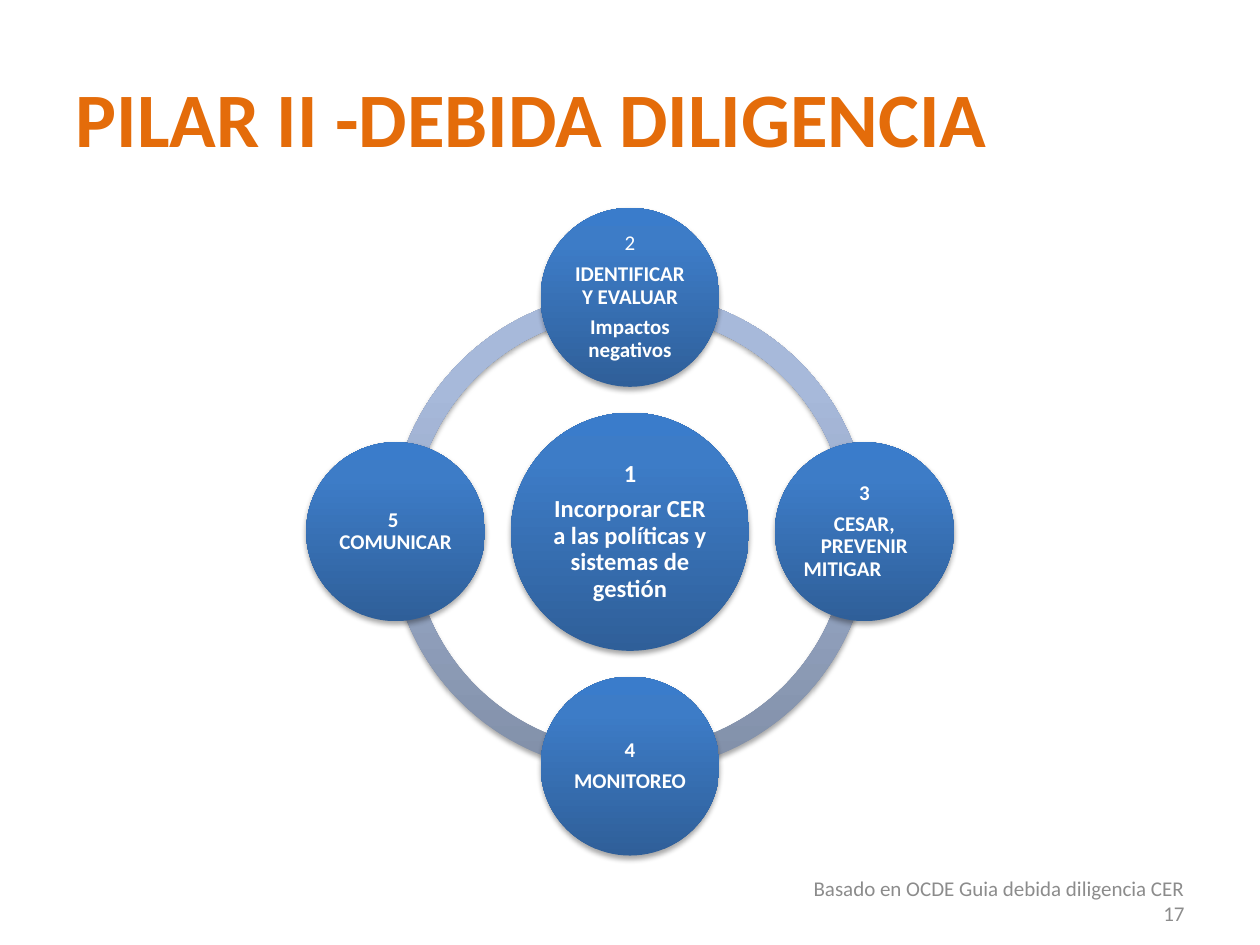
from lxml.etree import SubElement
from pptx import Presentation
from pptx.dml.color import RGBColor
from pptx.enum.shapes import MSO_SHAPE
from pptx.enum.text import MSO_ANCHOR, PP_ALIGN
from pptx.oxml.ns import qn
from pptx.util import Inches, Pt

WHITE, ORANGE, GRAY = "FFFFFF", "E46C0A", "8C8C8C"
CIRCLE_STOPS = [(0, "2F5F99"), (80, "3D7CC7"), (100, "3A7CCB")]
RING_STOPS = [(0, "818FA8"), (80, "A7B9DA"), (100, "A7BADC")]
CENTER_X, CENTER_Y = 5, 4.22
ORBIT = 1.86


def color(hex_string):
    return RGBColor.from_string(hex_string)


def add_element(parent, tag, **attributes):
    return SubElement(parent, qn(tag), {k: str(v) for k, v in attributes.items()})


class SlideBuilder:
    def __init__(self, presentation, font="Calibri"):
        self.font = font
        self.slide = presentation.slides.add_slide(presentation.slide_layouts[5])
        self.diagram = self.slide.shapes.add_group_shape()

    def add_run(self, paragraph, text, size, hex_color, bold=False):
        run = paragraph.add_run()
        run.text = text
        run.font.name = self.font
        run.font.size = Pt(size)
        run.font.bold = bold
        run.font.color.rgb = color(hex_color)

    def title(self, text):
        shape = self.slide.shapes.title
        shape.left, shape.top = Inches(0.5), Inches(0.3)
        shape.width, shape.height = Inches(9), Inches(1.25)
        shape.text_frame.vertical_anchor = MSO_ANCHOR.MIDDLE
        paragraph = shape.text_frame.paragraphs[0]
        paragraph.alignment = PP_ALIGN.LEFT
        self.add_run(paragraph, text, 44, ORANGE, True)

    def shaded_shape(self, kind, center_x, center_y, diameter, stops):
        """Add a square-framed shape with an upward gradient and a soft shadow."""
        shape = self.diagram.shapes.add_shape(
            kind, Inches(center_x - diameter / 2), Inches(center_y - diameter / 2),
            Inches(diameter), Inches(diameter))
        shape.line.fill.background()
        shape.fill.gradient()
        properties = shape.element.spPr
        gradient = properties.find(qn("a:gradFill"))
        for child in list(gradient):
            gradient.remove(child)
        stop_list = add_element(gradient, "a:gsLst")
        for position, hex_color in stops:
            stop = add_element(stop_list, "a:gs", pos=position * 1000)
            add_element(stop, "a:srgbClr", val=hex_color)
        add_element(gradient, "a:lin", ang=270 * 60000, scaled=0)

        shape.shadow.inherit = False
        shadow = add_element(properties.find(qn("a:effectLst")), "a:outerShdw",
                             blurRad=Pt(3.1), dist=Pt(1.8), dir=90 * 60000,
                             rotWithShape=0)
        shade = add_element(shadow, "a:srgbClr", val="000000")
        add_element(shade, "a:alpha", val=35000)
        return shape

    def ring_quarter(self, start, end):
        arc = self.shaded_shape(MSO_SHAPE.BLOCK_ARC, CENTER_X, CENTER_Y, 3.81, RING_STOPS)
        for index, value in enumerate((start, end, 0.046)):
            arc.adjustments[index] = value

    def circle(self, column, row, diameter, size, paragraphs):
        """Add a circle at an orbit step; each paragraph is (lines, bold)."""
        shape = self.shaded_shape(MSO_SHAPE.OVAL, CENTER_X + column * ORBIT,
                                  CENTER_Y + row * ORBIT, diameter, CIRCLE_STOPS)
        frame = shape.text_frame
        frame.word_wrap = True
        frame.vertical_anchor = MSO_ANCHOR.MIDDLE
        frame.margin_left = frame.margin_right = Inches(0.02)
        frame.margin_top = frame.margin_bottom = Inches(0.02)
        for index, (lines, bold) in enumerate(paragraphs):
            paragraph = frame.add_paragraph() if index else frame.paragraphs[0]
            paragraph.alignment = PP_ALIGN.CENTER
            paragraph.line_spacing = 0.9
            paragraph.space_after = Pt(round(size * 0.38, 1))
            for line_index, line in enumerate(lines):
                if line_index:
                    paragraph.add_line_break()
                self.add_run(paragraph, line, size, WHITE, bold)

    def footer(self, lines):
        box = self.slide.shapes.add_textbox(Inches(6.34), Inches(6.95),
                                            Inches(3.16), Inches(0.4))
        frame = box.text_frame
        frame.word_wrap = True
        frame.vertical_anchor = MSO_ANCHOR.MIDDLE
        for index, line in enumerate(lines):
            paragraph = frame.add_paragraph() if index else frame.paragraphs[0]
            paragraph.alignment = PP_ALIGN.RIGHT
            self.add_run(paragraph, line, 12, GRAY)


def main():
    presentation = Presentation()
    presentation.slide_width, presentation.slide_height = Inches(10), Inches(7.5)
    builder = SlideBuilder(presentation)
    builder.title("PILAR II -DEBIDA DILIGENCIA")

    # A quarter turn is 54 adjustment units.
    for quarter in (2, 1, 0, 3):
        builder.ring_quarter(quarter * 54, (quarter + 1) % 4 * 54)

    builder.circle(0, 0, 1.89, 14, [
        (["1"], True),
        (["Incorporar CER a las políticas y sistemas de gestión"], True)])
    steps = [
        (0, -1, [(["2"], False), (["IDENTIFICAR Y EVALUAR"], True),
                 (["Impactos negativos"], True)]),
        (1, 0, [(["3"], True), (["CESAR, PREVENIR MITIGAR\t"], True)]),
        (0, 1, [(["4"], True), (["MONITOREO"], True)]),
        (-1, 0, [(["5 ", "COMUNICAR"], True)]),
    ]
    for column, row, paragraphs in steps:
        builder.circle(column, row, 1.42, 12, paragraphs)

    builder.footer(["Basado en OCDE Guia debida diligencia CER", "17"])
    presentation.save("out.pptx")


if __name__ == "__main__":
    main()
